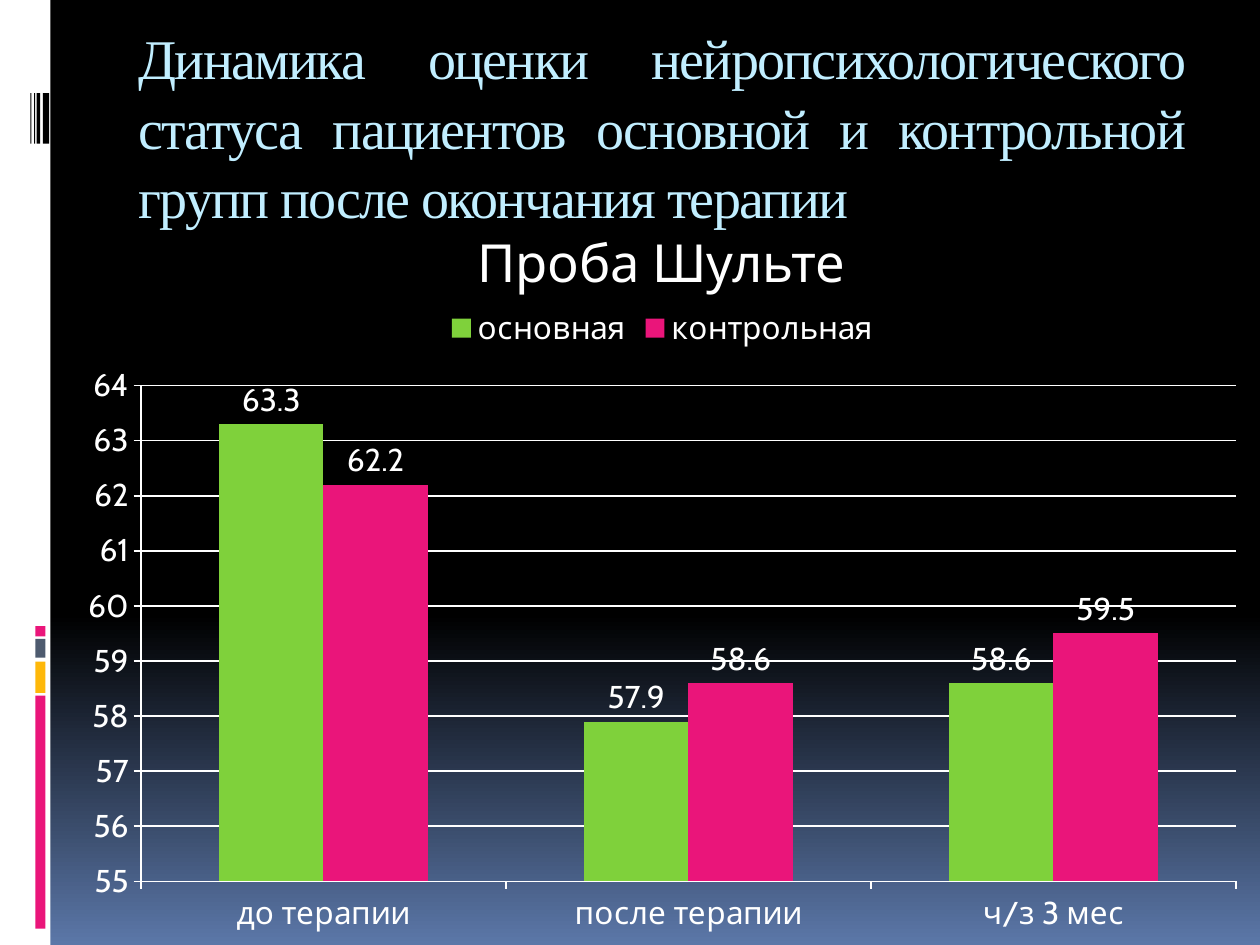
from copy import deepcopy

from pptx import Presentation
from pptx.chart.data import CategoryChartData
from pptx.dml.color import RGBColor
from pptx.enum.chart import XL_CHART_TYPE, XL_LABEL_POSITION, XL_LEGEND_POSITION, XL_TICK_MARK
from pptx.enum.shapes import MSO_SHAPE
from pptx.enum.text import MSO_ANCHOR, PP_ALIGN
from pptx.oxml.ns import qn
from pptx.util import Inches, Pt

COLORS = {
    "black": "000000",
    "white": "FFFFFF",
    "blue": "5B77A8",
    "title": "C1EEFF",
    "pink": "EA157A",
    "yellow": "FEB80A",
    "slate": "4E5B6F",
    "green": "7FD13B",
}


def color(name):
    return RGBColor.from_string(COLORS[name])


def add_text(slide, box, text, font_name, size, color_name, alignment):
    shape = slide.shapes.add_textbox(*[Inches(value) for value in box])
    shape.text_frame.word_wrap = True
    paragraph = shape.text_frame.paragraphs[0]
    paragraph.text = text
    paragraph.alignment = alignment
    paragraph.font.name = font_name
    paragraph.font.size = Pt(size)
    paragraph.font.color.rgb = color(color_name)
    return shape.text_frame


presentation = Presentation()
presentation.slide_width = Inches(10)
presentation.slide_height = Inches(7.5)
slide = presentation.slides.add_slide(presentation.slide_layouts[6])

background = slide.background.fill
background.gradient()
background.gradient_angle = 270
stop_list = next(slide.element.iter(qn("a:gsLst")))
stop_list.insert(1, deepcopy(stop_list[0]))
stops = [(0, "black"), (0.65, "black"), (1, "blue")]
for stop, (position, name) in zip(background.gradient_stops, stops):
    stop.position = position
    stop.color.rgb = color(name)

side_bars = [
    (0, 0, 0.4, 7.5, "white"),
    (0.28, 5.52, 0.08, 1.85, "pink"),
    (0.28, 5.25, 0.08, 0.25, "yellow"),
    (0.28, 5.07, 0.08, 0.15, "slate"),
    (0.28, 4.97, 0.08, 0.08, "pink"),
    (0.34, 0.74, 0.05, 0.4, "black"),
    (0.29, 0.74, 0.03, 0.4, "black"),
    (0.27, 0.74, 0.01, 0.4, "black"),
    (0.24, 0.74, 0.01, 0.4, "black"),
]
for *box, name in side_bars:
    bar = slide.shapes.add_shape(MSO_SHAPE.RECTANGLE, *[Inches(value) for value in box])
    bar.shadow.inherit = False
    bar.fill.solid()
    bar.fill.fore_color.rgb = color(name)
    bar.line.fill.background()

title = add_text(
    slide, (1, 0.13, 8.5, 1.73),
    "Динамика оценки нейропсихологического статуса пациентов основной и контрольной "
    "групп после окончания терапии",
    "Times New Roman", 32, "title", PP_ALIGN.JUSTIFY,
)
title.vertical_anchor = MSO_ANCHOR.MIDDLE
title.paragraphs[0].line_spacing = 1.04
title.paragraphs[0].runs[0].font._element.set("spc", "-100")

add_text(slide, (1, 1.78, 8.5, 5.17), "Проба Шульте", "Cabin", 30, "white", PP_ALIGN.CENTER)

chart_data = CategoryChartData()
chart_data.categories = ["до терапии", "после терапии", "ч/з 3 мес"]
chart_data.add_series("основная", [63.3, 57.9, 58.6])
chart_data.add_series("контрольная", [62.2, 58.6, 59.5])
chart = slide.shapes.add_chart(
    XL_CHART_TYPE.COLUMN_CLUSTERED,
    Inches(0.51), Inches(2.33), Inches(9.49), Inches(5.17), chart_data,
).chart
chart.has_title = False
chart.font.name = "Cabin"
chart.font.size = Pt(18)
chart.font.color.rgb = color("white")
chart.has_legend = True
chart.legend.position = XL_LEGEND_POSITION.TOP
chart.legend.include_in_layout = False

plot = chart.plots[0]
plot.vary_by_categories = False
plot.gap_width = 150
plot.overlap = 0
plot.has_data_labels = True
plot.data_labels.show_value = True
plot.data_labels.position = XL_LABEL_POSITION.OUTSIDE_END
for series, name in zip(plot.series, ["green", "pink"]):
    series.format.fill.solid()
    series.format.fill.fore_color.rgb = color(name)

value_axis = chart.value_axis
value_axis.minimum_scale = 55
value_axis.maximum_scale = 64
value_axis.major_unit = 1
value_axis.has_major_gridlines = True
for axis in (chart.category_axis, value_axis):
    axis.major_tick_mark = XL_TICK_MARK.OUTSIDE
    axis.minor_tick_mark = XL_TICK_MARK.NONE
for line_owner in (chart.category_axis, value_axis, value_axis.major_gridlines):
    line_owner.format.line.color.rgb = color("white")
    line_owner.format.line.width = Pt(0.94)

presentation.save("out.pptx")
